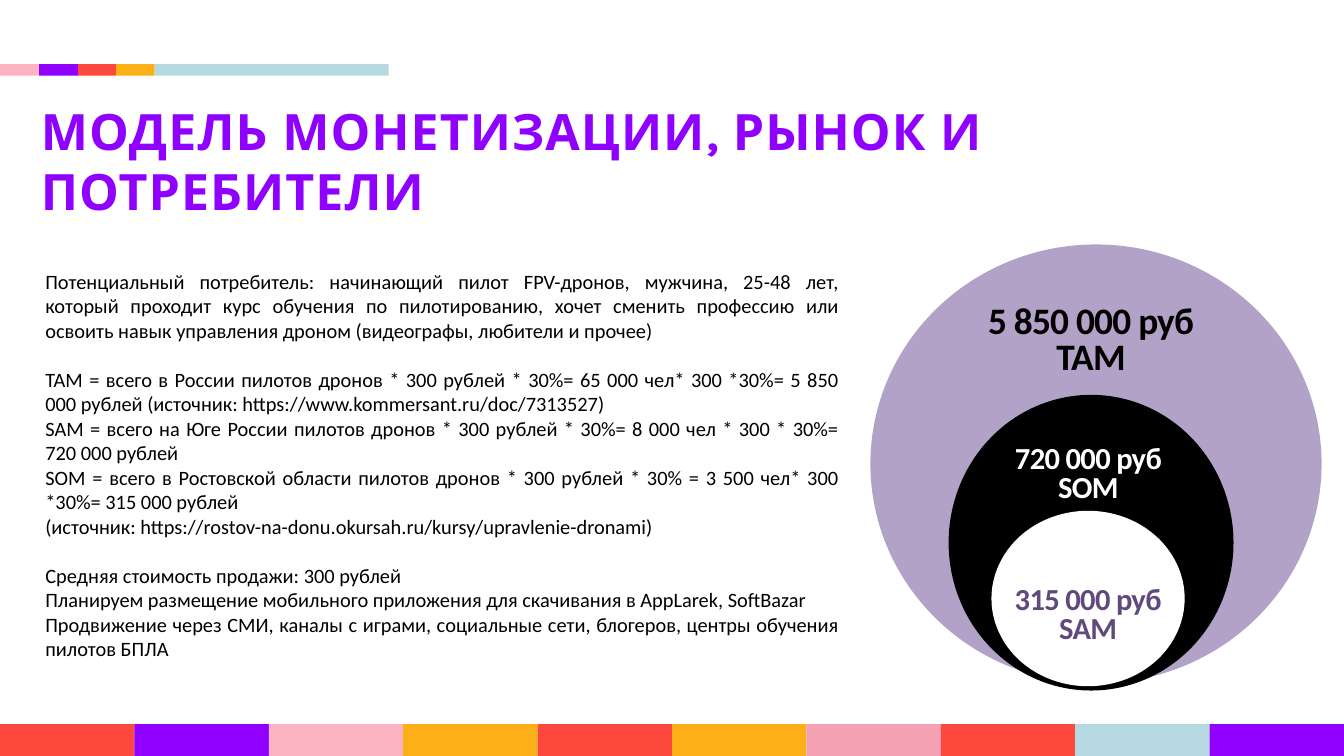
from lxml.etree import SubElement
from pptx import Presentation
from pptx.dml.color import RGBColor
from pptx.enum.shapes import MSO_SHAPE
from pptx.enum.text import MSO_ANCHOR, MSO_AUTO_SIZE, PP_ALIGN
from pptx.oxml.ns import qn
from pptx.util import Cm, Pt

PINK = RGBColor(0xFB, 0xB3, 0xC1)
ROSE = RGBColor(0xF4, 0xA1, 0xB3)
VIOLET = RGBColor(0x8F, 0x00, 0xFF)
RED = RGBColor(0xFD, 0x49, 0x3D)
AMBER = RGBColor(0xFC, 0xAF, 0x17)
BLUE = RGBColor(0xB5, 0xD8, 0xE1)
LILAC = RGBColor(0xB3, 0xA2, 0xC7)
PLUM = RGBColor(0x60, 0x4A, 0x7B)
BLACK = RGBColor(0, 0, 0)
WHITE = RGBColor(0xFF, 0xFF, 0xFF)

WIDTH, HEIGHT = 55.85, 31.42

deck = Presentation()
deck.slide_width, deck.slide_height = Cm(WIDTH), Cm(HEIGHT)
slide = deck.slides.add_slide(deck.slide_layouts[1])


def add_shape(kind, left, top, width, height, color):
    shape = slide.shapes.add_shape(kind, Cm(left), Cm(top), Cm(width), Cm(height))
    shape.shadow.inherit = False
    shape.fill.solid()
    shape.fill.fore_color.rgb = color
    shape.line.fill.background()


def style(par, name, size, color, bold=False, track=0):
    """Set the paragraph font; track is letter spacing in points."""
    font = par.font
    font.name, font.size, font.bold = name, Pt(size), bold
    font.color.rgb = color
    if track:
        props = par._p.get_or_add_pPr().get_or_add_defRPr()
        props.set("spc", str(round(track * 100)))


# Title
title = slide.shapes.title
title.left, title.top, title.width, title.height = Cm(1.6), Cm(4.12), Cm(52.17), Cm(5.08)
frame = title.text_frame
frame.text = "МОДЕЛЬ МОНЕТИЗАЦИИ, РЫНОК И ПОТРЕБИТЕЛИ"
frame.word_wrap, frame.auto_size = True, MSO_AUTO_SIZE.NONE
frame.vertical_anchor = MSO_ANCHOR.TOP
frame.margin_left = frame.margin_right = frame.margin_bottom = Cm(0.1)
frame.margin_top = Cm(0.05)
head = frame.paragraphs[0]
head.alignment = PP_ALIGN.LEFT
style(head, "Karla", 59, VIOLET, True, 1.2)

# Market estimate: groups of paragraphs, one line of space between groups
groups = [
    [
        "Потенциальный потребитель: начинающий пилот FPV-дронов, мужчина, 25-48 лет, который проходит курс обучения по пилотированию, хочет сменить профессию или освоить навык управления дроном (видеографы, любители и прочее)",
    ],
    [
        "TAM = всего в России пилотов дронов * 300 рублей * 30%= 65 000 чел* 300 *30%= 5 850 000 рублей (источник: https://www.kommersant.ru/doc/7313527)",
        "SAM = всего на Юге России пилотов дронов * 300 рублей * 30%= 8 000 чел * 300 * 30%= 720 000 рублей",
        "SOM = всего в Ростовской области пилотов дронов * 300 рублей * 30% = 3 500 чел* 300 *30%= 315 000 рублей",
        "(источник: https://rostov-na-donu.okursah.ru/kursy/upravlenie-dronami)",
    ],
    [
        "Средняя стоимость продажи: 300 рублей",
        "Планируем размещение мобильного приложения для скачивания в AppLarek, SoftBazar",
        "Продвижение через СМИ, каналы с играми, социальные сети, блогеров, центры обучения пилотов БПЛА",
    ],
]
body = slide.placeholders[1]
body.left, body.top, body.width, body.height = Cm(1.63), Cm(11.05), Cm(33.48), Cm(17.7)
frame = body.text_frame
frame.word_wrap, frame.auto_size = True, MSO_AUTO_SIZE.NONE
for g, group in enumerate(groups):
    for i, text in enumerate(group):
        par = frame.add_paragraph() if g or i else frame.paragraphs[0]
        par.text = text
        par.alignment = PP_ALIGN.JUSTIFY
        par.space_before = Pt(29.3 if g and not i else 0)
        props = par._p.get_or_add_pPr()
        props.set("marL", "0")
        props.set("indent", "0")
        SubElement(props, qn("a:buNone"))
        style(par, "Calibri", 24, BLACK)

# Top stripe
edges = [0, 1.63, 3.25, 4.83, 6.43, 16.15]
for left, right, color in zip(edges, edges[1:], [PINK, VIOLET, RED, AMBER, BLUE]):
    add_shape(MSO_SHAPE.RECTANGLE, left, 2.67, right - left, 0.48, color)

# Bottom band
band = [RED, VIOLET, PINK, AMBER, RED, AMBER, ROSE, RED, BLUE, VIOLET]
step = WIDTH / len(band)
for i, color in enumerate(band):
    add_shape(MSO_SHAPE.RECTANGLE, i * step, 30.1, step, HEIGHT - 30.1, color)

# Nested market circles
for *box, color in [
    (36.17, 10.16, 18.75, 18.24, LILAC),
    (39.42, 16.41, 11.84, 12.29, BLACK),
    (41.2, 21.23, 8.03, 7.29, WHITE),
]:
    add_shape(MSO_SHAPE.OVAL, *box, color)

labels = [
    ((39.42, 12.55, 11.84, 3.76), ("5 850 000 руб", "TAM"), 44, BLACK, -0.9),
    ((41.22, 24.23, 8, 3.23), ("315 000 руб", "SAM"), 36, PLUM, -0.8),
    ((40.67, 18.39, 9.12, 3.02), ("720 000 руб", "SOM"), 36, WHITE, -0.8),
]
for box, lines, size, color, track in labels:
    frame = slide.shapes.add_textbox(*map(Cm, box)).text_frame
    frame.word_wrap = True
    frame.margin_left = frame.margin_right = Cm(0.15)
    frame.margin_top = frame.margin_bottom = Cm(0.15)
    frame.text = "\n".join(lines)
    for par in frame.paragraphs:
        par.alignment = PP_ALIGN.CENTER
        par.line_spacing = 0.8
        style(par, "Calibri", size, color, True, track)

deck.save("out.pptx")
